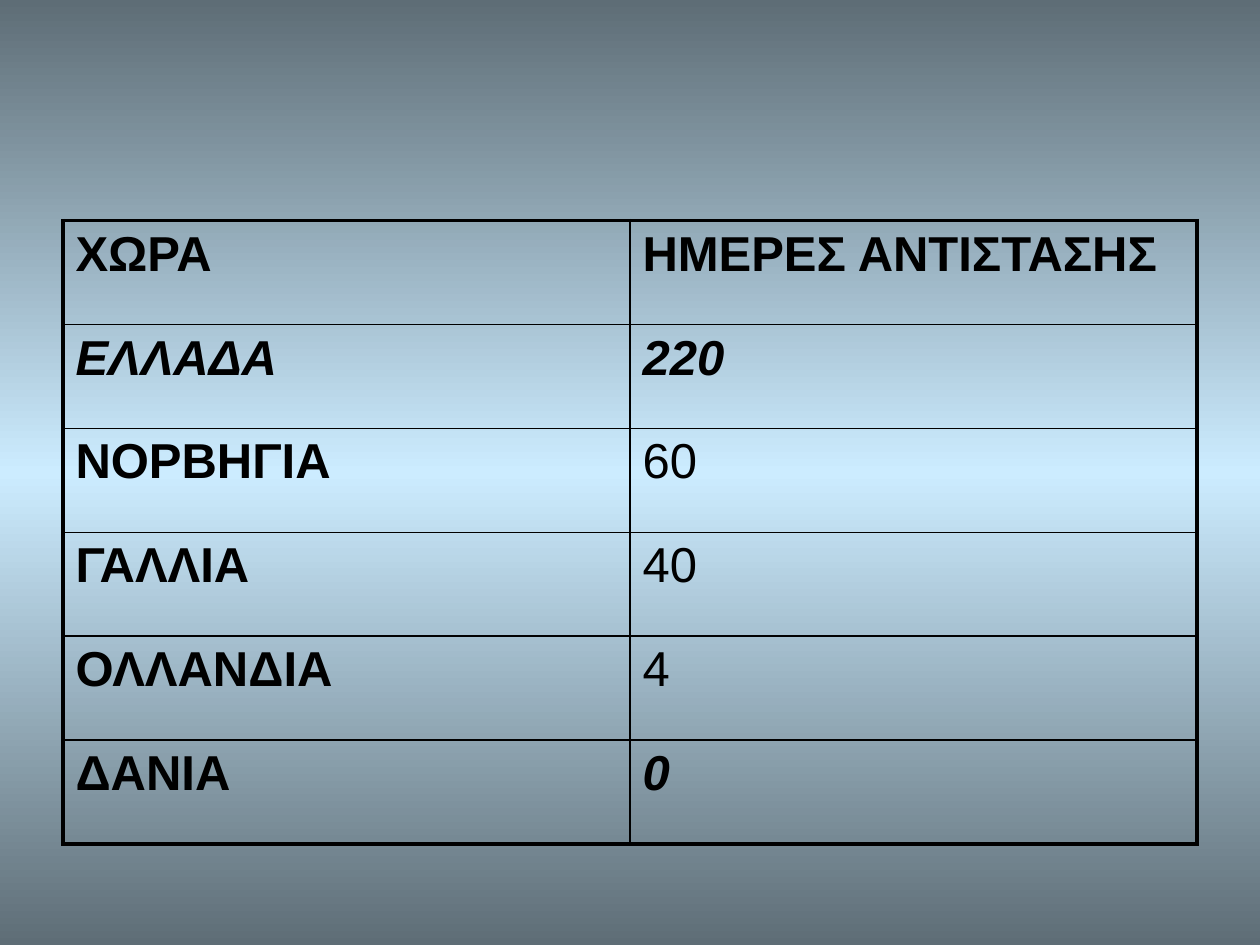
import copy

import pptx
import pptx.dml.color
import pptx.oxml
import pptx.oxml.ns
import pptx.util

Pt = pptx.util.Pt
qn = pptx.oxml.ns.qn

# Each cell: text, bold, italic
RESISTANCE = [
    [("ΧΩΡΑ", True, False), ("ΗΜΕΡΕΣ ΑΝΤΙΣΤΑΣΗΣ", True, False)],
    [("ΕΛΛΑΔΑ", True, True), ("220", True, True)],
    [("ΝΟΡΒΗΓΙΑ", True, False), ("60", False, False)],
    [("ΓΑΛΛΙΑ", True, False), ("40", False, False)],
    [("ΟΛΛΑΝΔΙΑ", True, False), ("4", False, False)],
    [("ΔΑΝΙΑ", True, False), ("0", True, True)],
]
GRADIENT = ["5E6D76", "CCECFF", "5E6D76"]
INK = "000000"
OUTER, INNER = 2.25, 1
LEFT, TOP, COLUMN_WIDTH, ROW_HEIGHT = 36, 126, 324, 59.4


def rgb(colour):
    return pptx.dml.color.RGBColor.from_string(colour)


def paint_background(slide):
    fill = slide.background.fill
    fill.gradient()
    fill.gradient_angle = 90
    stop_list = slide.element.find(".//" + qn("a:gsLst"))
    stop_list.insert(1, copy.deepcopy(stop_list[0]))
    for i, (stop, colour) in enumerate(zip(fill.gradient_stops, GRADIENT)):
        stop.position = i / (len(GRADIENT) - 1)
        stop.color.rgb = rgb(colour)


def set_borders(cell, widths):
    """Draw the left, right, top and bottom lines, in that order."""
    properties = cell._tc.get_or_add_tcPr()
    for i, (side, width) in enumerate(zip("LRTB", widths)):
        properties.insert(i, pptx.oxml.parse_xml(
            f'<a:ln{side} xmlns:a="http://schemas.openxmlformats.org/drawingml/2006/main"'
            f' w="{int(Pt(width))}"><a:solidFill><a:srgbClr val="{INK}"/></a:solidFill>'
            f'</a:ln{side}>'))


def write(cell, text, bold, italic):
    run = cell.text_frame.paragraphs[0].add_run()
    run.text = text
    run.font.name = "Arial"
    run.font.size = Pt(28)
    run.font.bold = bold
    run.font.italic = italic
    run.font.color.rgb = rgb(INK)


def add_resistance_table(slide):
    rows, columns = len(RESISTANCE), len(RESISTANCE[0])
    table = slide.shapes.add_table(
        rows, columns, Pt(LEFT), Pt(TOP),
        Pt(columns * COLUMN_WIDTH), Pt(rows * ROW_HEIGHT)).table
    table.first_row = table.horz_banding = False
    for r, countries in enumerate(RESISTANCE):
        for c, content in enumerate(countries):
            cell = table.cell(r, c)
            cell.fill.background()
            edges = (c == 0, c == columns - 1, r == 0, r == rows - 1)
            set_borders(cell, [OUTER if edge else INNER for edge in edges])
            write(cell, *content)


def main():
    deck = pptx.Presentation()
    deck.slide_width, deck.slide_height = Pt(720), Pt(540)
    slide = deck.slides.add_slide(deck.slide_layouts[6])
    paint_background(slide)
    add_resistance_table(slide)
    deck.save("out.pptx")


if __name__ == "__main__":
    main()
